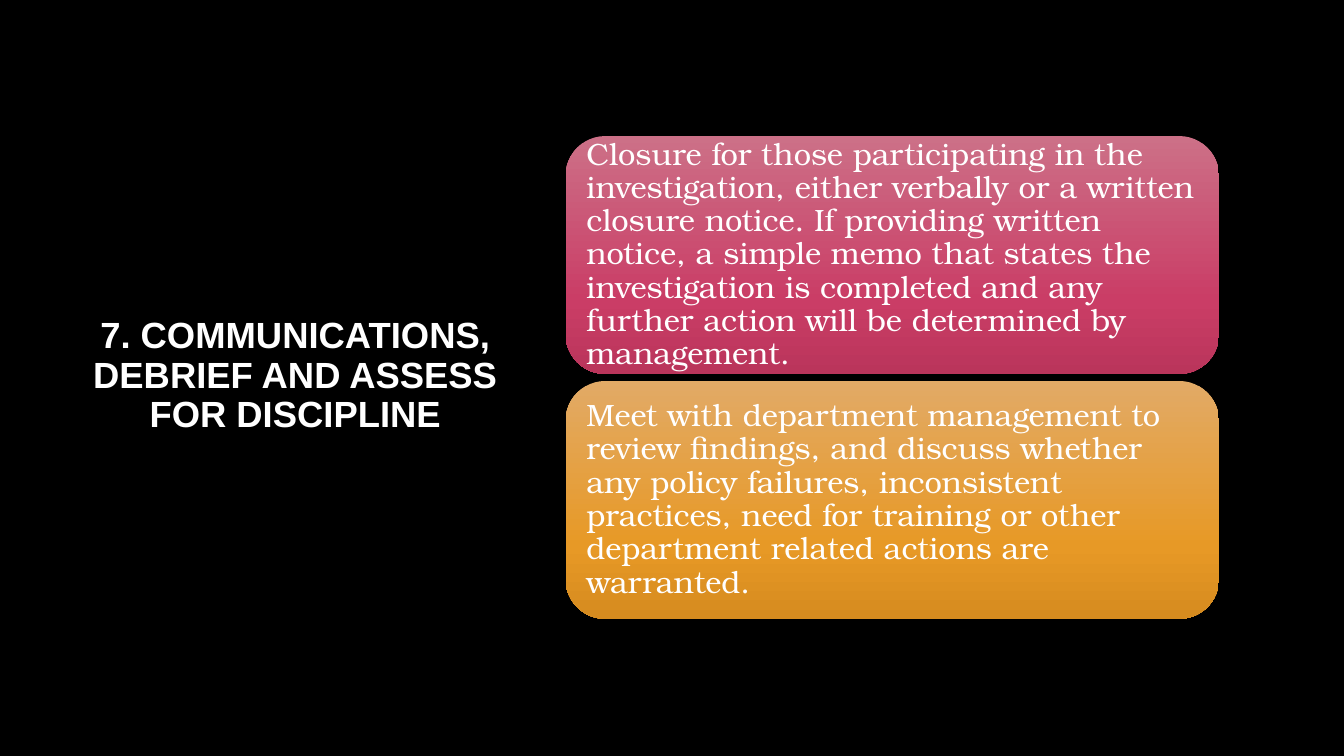
from copy import deepcopy

from pptx import Presentation
from pptx.dml.color import RGBColor
from pptx.enum.shapes import MSO_SHAPE as SHAPE
from pptx.enum.text import MSO_ANCHOR as ANCHOR, MSO_AUTO_SIZE as AUTO, PP_ALIGN as ALIGN
from pptx.util import Inches, Pt

BLACK = RGBColor(0x00, 0x00, 0x00)
WHITE = RGBColor(0xFF, 0xFF, 0xFF)
PINKS = [RGBColor(0xCC, 0x70, 0x87), RGBColor(0xCA, 0x3D, 0x66), RGBColor(0xBA, 0x35, 0x5B)]
ORANGES = [RGBColor(0xE2, 0xAA, 0x66), RGBColor(0xE7, 0x99, 0x26), RGBColor(0xD6, 0x8B, 0x1F)]
STOPS = [0, 0.69, 1]

# Card column
LEFT, TOP, WIDTH, HEIGHT, GAP = 5.61, 1.35, 6.48, 2.36, 0.07
CARDS = [
    ("Closure for those participating in the investigation, either verbally or a "
     "written closure notice. If providing written notice, a simple memo that states "
     "the investigation is completed and any further action will be determined by "
     "management.", PINKS),
    ("Meet with department management to review findings, and discuss whether any "
     "policy failures, inconsistent practices, need for training or other department "
     "related actions are warranted.", ORANGES),
]


def write(tf, text, align, font, size, bold):
    tf.text = text
    tf.word_wrap = True
    tf.auto_size = AUTO.NONE
    tf.vertical_anchor = ANCHOR.MIDDLE
    p = tf.paragraphs[0]
    p.alignment = align
    p.line_spacing = 0.9
    r = p.runs[0]
    r.font.name = font
    r.font.size = Pt(size)
    r.font.bold = bold
    r.font.color.rgb = WHITE


prs = Presentation()
prs.slide_width, prs.slide_height = Inches(13.33), Inches(7.5)
slide = prs.slides.add_slide(prs.slide_layouts[5])
slide.background.fill.solid()
slide.background.fill.fore_color.rgb = BLACK

# Title
title = slide.shapes.title
title.left, title.top = Inches(0.82), Inches(0.67)
title.width, title.height = Inches(4.22), Inches(6.13)
write(title.text_frame, "7. COMMUNICATIONS, DEBRIEF AND ASSESS FOR DISCIPLINE",
      ALIGN.CENTER, "Arial", 26, True)

# Gradient cards
for row, (text, colors) in enumerate(CARDS):
    sp = slide.shapes.add_shape(SHAPE.ROUNDED_RECTANGLE, Inches(LEFT),
                                Inches(TOP + row * (HEIGHT + GAP)),
                                Inches(WIDTH), Inches(HEIGHT))
    sp.shadow.inherit = False
    sp.line.fill.background()
    sp.fill.gradient()
    sp.fill.gradient_angle = 270

    # Third gradient stop
    stop_list = sp.fill._fill._gradFill.gsLst
    stop_list.append(deepcopy(stop_list[-1]))
    for stop, position, color in zip(sp.fill.gradient_stops, STOPS, colors):
        stop.position = position
        stop.color.rgb = color

    tf = sp.text_frame
    tf.margin_left = tf.margin_right = tf.margin_top = tf.margin_bottom = Inches(0.09)
    write(tf, text, ALIGN.LEFT, "TeX Gyre Bonum", 22, False)

prs.save("out.pptx")
